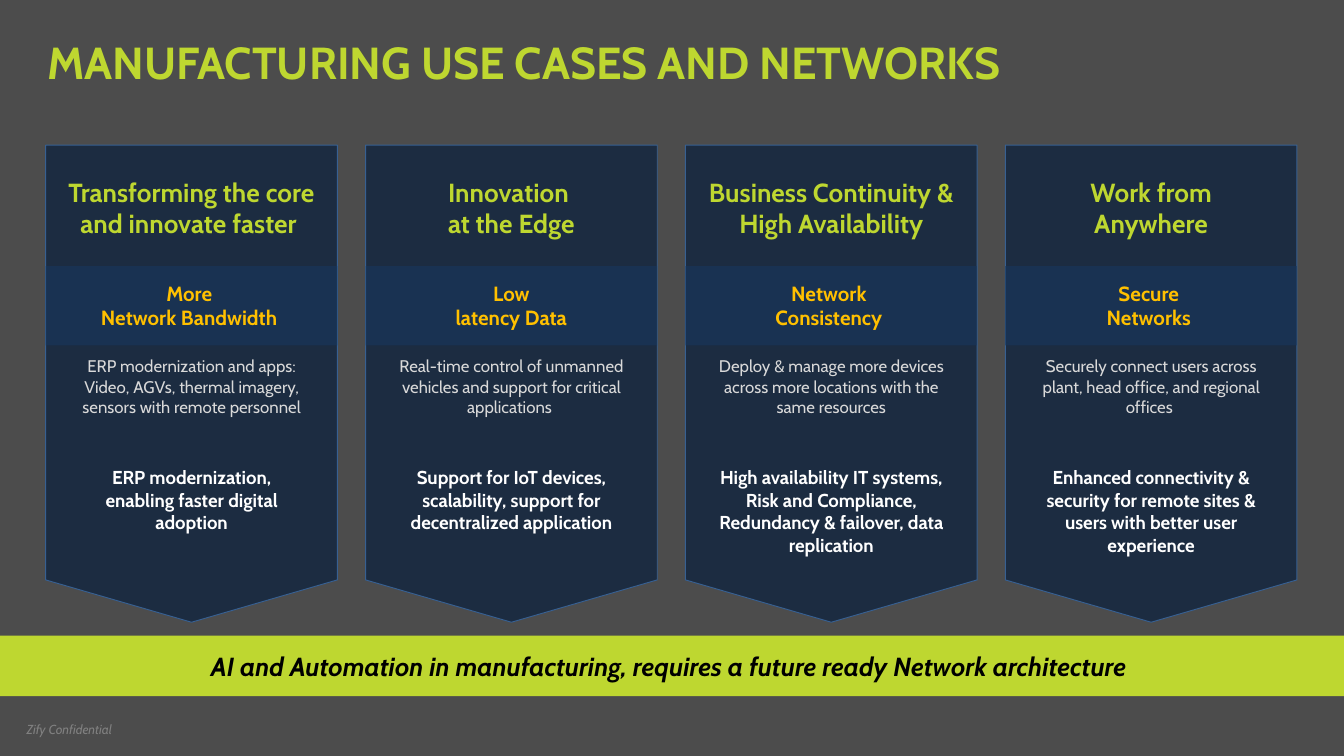
from lxml import etree
from pptx import Presentation
from pptx import util as u
from pptx.dml.color import RGBColor
from pptx.enum import shapes, text
from pptx.oxml import ns

WIDTH = 10
HEIGHT = WIDTH * 9 / 16
LIME, AMBER, NAVY, STEEL = "BED730", "FFC000", "10253F", "17375E"
COLUMN_LEFT, COLUMN_TOP, COLUMN_PITCH = 0.34, 1.08, 2.38
COLUMN_WIDTH, COLUMN_HEIGHT = 2.17, 3.55
TEXT_WIDTH = 1.91

COLUMNS = [
    (2.25, "Transforming the core and innovate faster ",
     "More \nNetwork Bandwidth ",
     "ERP modernization and apps:\nVideo, AGVs, thermal imagery, sensors with remote personnel",
     "ERP modernization, enabling faster digital adoption"),
    (1.95, "Innovation \nat the Edge",
     "Low\n latency Data ",
     "Real-time control of unmanned vehicles and support for critical applications ",
     "Support for IoT devices, scalability, support for decentralized application"),
    (2.02, "Business Continuity & High Availability",
     "Network \nConsistency ",
     "Deploy & manage more devices across more locations with the same resources",
     "High availability IT systems, Risk and Compliance, Redundancy & failover, data replication"),
    (1.96, "Work from Anywhere",
     "Secure \nNetworks ",
     "Securely connect users across plant, head office, and regional offices ",
     "Enhanced connectivity & security for remote sites & users with better user experience"),
]


def color(value):
    """Turn a hex string into a colour."""
    return RGBColor.from_string(value)


def write(shape, content, size, fill, bold=False, italic=False, centered=True):
    """Set the text of a shape and format its runs."""
    frame = shape.text_frame
    frame.word_wrap = True
    frame.text = content
    for paragraph in frame.paragraphs:
        paragraph.alignment = text.PP_ALIGN.CENTER if centered else text.PP_ALIGN.LEFT
        for run in paragraph.runs:
            font = run.font
            font.name, font.size = "Cabin", u.Pt(size)
            font.bold, font.italic = bold, italic
            font.color.rgb = color(fill)


def add_text(slide, box, content, size, fill, **style):
    """Add a text box at the given box."""
    shape = slide.shapes.add_textbox(*map(u.Inches, box))
    write(shape, content, size, fill, **style)
    return shape


def add_block(slide, kind, box, fill, opacity=100, line=None):
    """Add a filled preset shape, translucent or outlined if asked."""
    shape = slide.shapes.add_shape(kind, *map(u.Inches, box))
    shape.shadow.inherit = False
    shape.fill.solid()
    shape.fill.fore_color.rgb = color(fill)
    if opacity < 100:
        tint = shape.element.spPr.find(".//" + ns.qn("a:srgbClr"))
        etree.SubElement(tint, ns.qn("a:alpha")).set("val", str(opacity * 1000))
    if line:
        shape.line.color.rgb = color(line)
        shape.line.width = u.Pt(0.5)
    else:
        shape.line.fill.background()
    return shape


def add_backdrop(slide):
    """Cover the slide with a translucent shade and add the footer."""
    add_block(slide, shapes.MSO_SHAPE.RECTANGLE, (0, 0, WIDTH, HEIGHT), "000000", 70)
    add_text(slide, (0.1, 5.32, 1.46, 0.22), "Zify Confidential", 7, "808080",
             italic=True, centered=False)


def add_title(slide, box):
    """Add the slide title."""
    title = add_text(slide, box, "MANUFACTURING USE CASES AND NETWORKS", 24, LIME,
                     bold=True, centered=False)
    title.text_frame.margin_left = 0
    title.text_frame.vertical_anchor = text.MSO_ANCHOR.MIDDLE


def add_column(slide, box, column):
    """Add a downward banner with its heading, need, detail and outcome."""
    left, top, width, height = box
    heading_width, heading, need, detail, outcome = column
    turn = (height - width) / 2
    banner = add_block(slide, shapes.MSO_SHAPE.PENTAGON,
                       (left - turn, top + turn, height, width), NAVY, 80, "376092")
    banner.adjustments[0] = 0.145
    banner.rotation = 90
    add_block(slide, shapes.MSO_SHAPE.RECTANGLE, (left, top + 0.9, width, 0.59), STEEL, 60)
    rows = [
        (0.18, 0.57, heading_width, heading, 14, LIME, True),
        (0.96, 0.47, TEXT_WIDTH, need, 11, AMBER, True),
        (1.52, 0.71, TEXT_WIDTH, detail, 9, "D9D9D9", False),
        (2.34, 0.77, TEXT_WIDTH, outcome, 10, "FFFFFF", True),
    ]
    for offset, row_height, row_width, content, size, fill, bold in rows:
        row = (left + (width - row_width) / 2, top + offset, row_width, row_height)
        add_text(slide, row, content, size, fill, bold=bold)


def add_message(slide, box):
    """Add the full-width closing message."""
    bar = add_block(slide, shapes.MSO_SHAPE.ROUNDED_RECTANGLE, box, LIME)
    bar.adjustments[0] = 0
    bar.text_frame.vertical_anchor = text.MSO_ANCHOR.MIDDLE
    write(bar, "AI and Automation in manufacturing, requires a future ready Network architecture ",
          14, "000000", bold=True, italic=True)


def main():
    """Build and save the presentation."""
    presentation = Presentation()
    presentation.slide_width = u.Inches(WIDTH)
    presentation.slide_height = u.Inches(HEIGHT)
    slide = presentation.slides.add_slide(presentation.slide_layouts[6])
    add_backdrop(slide)
    add_title(slide, (0.35, 0.23, 9.29, 0.45))
    for index, column in enumerate(COLUMNS):
        left = COLUMN_LEFT + index * COLUMN_PITCH
        add_column(slide, (left, COLUMN_TOP, COLUMN_WIDTH, COLUMN_HEIGHT), column)
    add_message(slide, (0, 4.73, WIDTH, 0.45))
    presentation.save("out.pptx")


if __name__ == "__main__":
    main()
